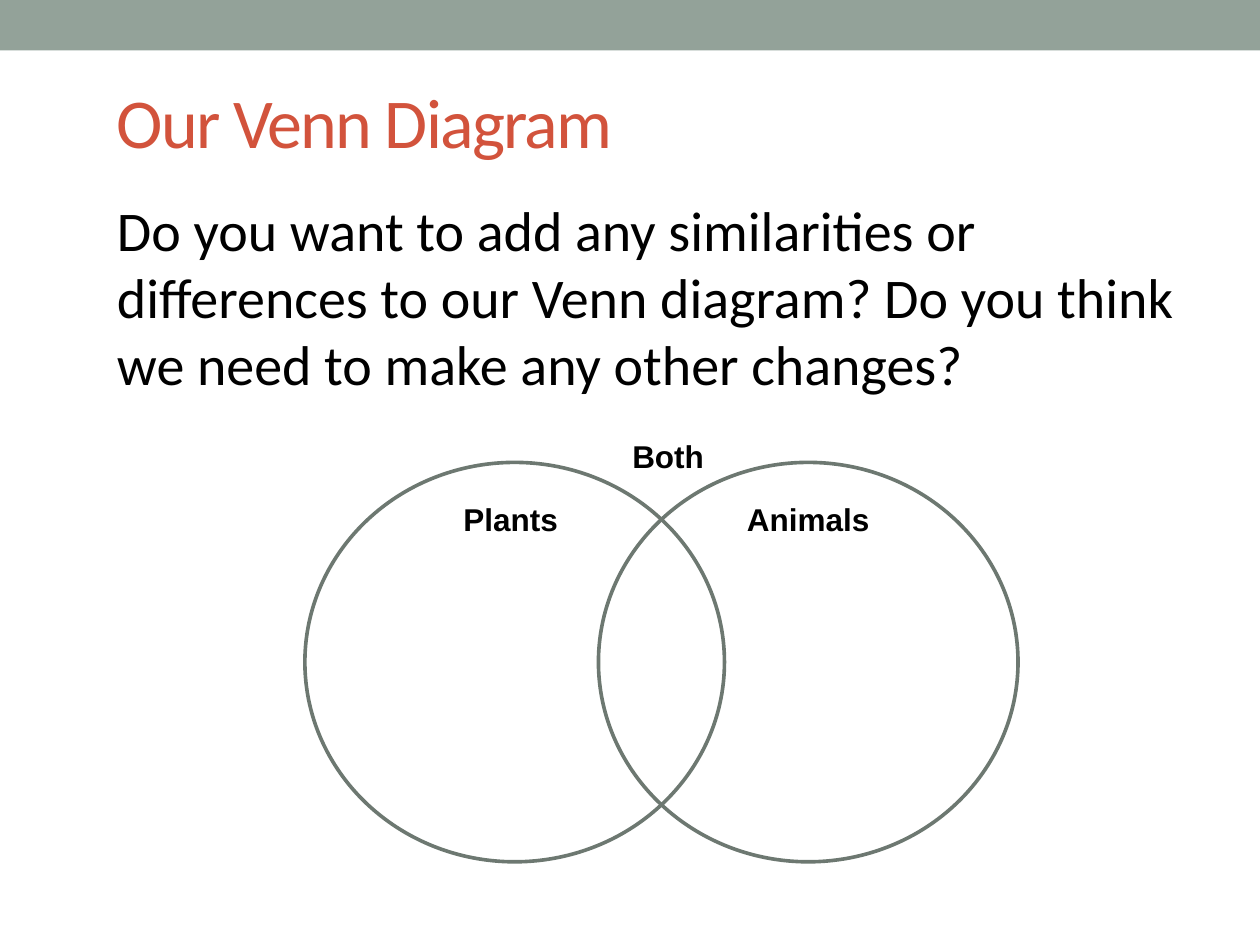
from dataclasses import dataclass

from pptx import Presentation
from pptx import util as u
from pptx.dml.color import RGBColor
from pptx.enum import shapes, text


@dataclass(frozen=True)
class Theme:
    band: str = "93A299"
    title: str = "D2533C"
    ink: str = "000000"
    outline: str = "6D7871"
    outline_width: float = 2.08
    heading_font: str = "Calibri"
    label_font: str = "Arial"
    title_size: int = 40
    body_size: int = 32
    label_size: int = 18


class SlideBuilder:
    def __init__(self, slide, theme):
        self.slide = slide
        self.theme = theme

    def add_shape(self, kind, box):
        shape = self.slide.shapes.add_shape(kind, *map(u.Inches, box))
        shape.shadow.inherit = False
        return shape

    def add_band(self, box):
        shape = self.add_shape(shapes.MSO_SHAPE.RECTANGLE, box)
        shape.fill.solid()
        shape.fill.fore_color.rgb = RGBColor.from_string(self.theme.band)
        shape.line.fill.background()

    def add_circle(self, box):
        shape = self.add_shape(shapes.MSO_SHAPE.OVAL, box)
        shape.fill.background()
        shape.line.color.rgb = RGBColor.from_string(self.theme.outline)
        shape.line.width = u.Pt(self.theme.outline_width)

    def add_text(self, words, box, color, anchor=text.MSO_ANCHOR.TOP, spacing=None, **font):
        shape = self.slide.shapes.add_textbox(*map(u.Inches, box))
        frame = shape.text_frame
        frame.word_wrap = True
        frame.vertical_anchor = anchor
        run = frame.paragraphs[0].add_run()
        run.text = words
        font["size"] = u.Pt(font["size"])
        for name, value in font.items():
            setattr(run.font, name, value)
        run.font.color.rgb = RGBColor.from_string(color)
        if spacing is not None:
            run.font._element.set("spc", str(int(spacing * 100)))

    def add_title(self, words, box):
        self.add_text(words, box, self.theme.title, text.MSO_ANCHOR.MIDDLE, spacing=-1,
                      name=self.theme.heading_font, size=self.theme.title_size)

    def add_body(self, words, box):
        self.add_text(words, box, self.theme.ink,
                      name=self.theme.heading_font, size=self.theme.body_size)

    def add_label(self, words, box):
        self.add_text(words, box, self.theme.ink,
                      name=self.theme.label_font, size=self.theme.label_size, bold=True)


def main():
    presentation = Presentation()
    presentation.slide_width = u.Inches(10)
    presentation.slide_height = u.Inches(7.5)
    slide = presentation.slides.add_slide(presentation.slide_layouts[6])
    builder = SlideBuilder(slide, Theme())

    builder.add_band((0, 0, 10, 0.4))
    builder.add_title("Our Venn Diagram", (0.83, 0.42, 8.67, 1.08))
    builder.add_body(
        "Do you want to add any similarities or differences to our Venn diagram? "
        "Do you think we need to make any other changes?",
        (0.83, 1.5, 8.67, 1.75),
    )
    for left in (2.42, 4.75):
        builder.add_circle((left, 3.67, 3.33, 3.17))
    for words, left, top, width in (
        ("Plants", 3.58, 3.92, 1),
        ("Animals", 5.83, 3.92, 1.25),
        ("Both", 4.92, 3.42, 0.83),
    ):
        builder.add_label(words, (left, top, width, 0.4))

    presentation.save("out.pptx")


if __name__ == "__main__":
    main()
